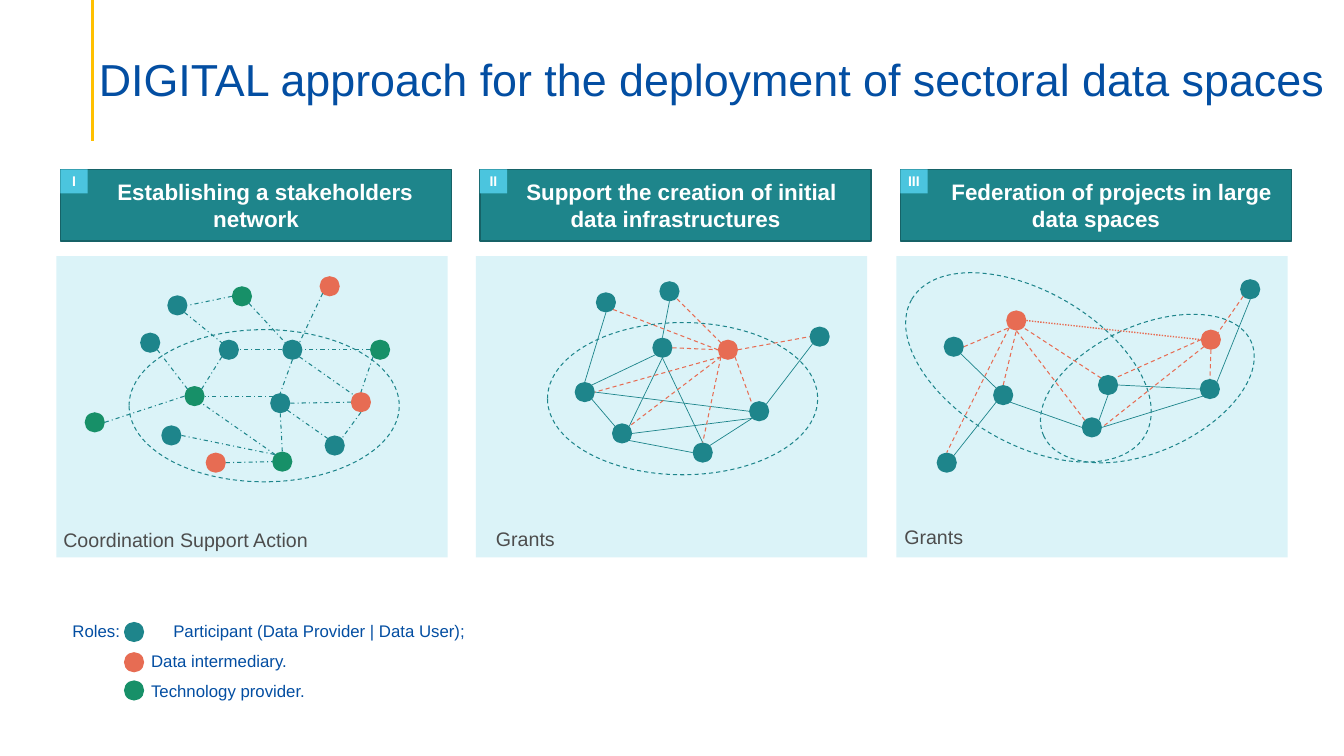
from dataclasses import dataclass

from pptx import Presentation
from pptx.dml.color import RGBColor
from pptx.enum.dml import MSO_LINE
from pptx.enum.shapes import MSO_CONNECTOR, MSO_SHAPE
from pptx.enum.text import MSO_ANCHOR, MSO_AUTO_SIZE, PP_ALIGN
from pptx.oxml.ns import qn
from pptx.util import Pt
from lxml import etree

RECT, OVAL = MSO_SHAPE.RECTANGLE, MSO_SHAPE.OVAL
STRAIGHT = MSO_CONNECTOR.STRAIGHT
DASH, DASH_DOT, DOT = MSO_LINE.DASH, MSO_LINE.DASH_DOT, MSO_LINE.ROUND_DOT
LEFT, CENTER = PP_ALIGN.LEFT, PP_ALIGN.CENTER
TOP, MIDDLE, BOTTOM = MSO_ANCHOR.TOP, MSO_ANCHOR.MIDDLE, MSO_ANCHOR.BOTTOM

PX = 9144


@dataclass(frozen=True)
class Theme:
    font: str = "Arial"
    blue: str = "034EA2"
    gold: str = "FFC000"
    teal: str = "1E858B"
    teal_edge: str = "166267"
    cyan: str = "4BC5DE"
    pale: str = "DBF3F8"
    coral: str = "E76C53"
    green: str = "179068"
    gray: str = "4D4D4D"
    white: str = "FFFFFF"
    title: int = 32
    header: int = 16
    caption: int = 14
    legend: int = 12
    badge: int = 10


THEME = Theme()

TITLE = "DIGITAL approach for the deployment of sectoral data spaces"
ROLE_COLORS = {"participant": THEME.teal, "intermediary": THEME.coral, "provider": THEME.green}
LINK_STYLES = {
    "contact": (THEME.teal, 0.75, DASH_DOT),
    "exchange": (THEME.teal, 0.5, None),
    "brokered": (THEME.coral, 0.75, DASH),
    "federated": (THEME.coral, 1, DOT),
}
PANELS = [
    {
        "number": "I", "header": "Establishing a stakeholders network", "indent": 18,
        "caption": ("Coordination Support Action", 53, 519, 264),
        "rings": [(128, 327, 268, 151, 0)],
        "nodes": {
            "participant": {"A": (149, 340), "B": (290, 347), "C": (227, 347), "D": (278, 400),
                            "F": (170, 432), "J": (176, 303), "M": (332, 442)},
            "intermediary": {"I": (327, 284), "N": (358, 399), "O": (214, 459)},
            "provider": {"E": (94, 419), "G": (193, 393), "H": (280, 458),
                         "K": (377, 347), "L": (240, 294)},
        },
        "links": {
            "contact": "L.se-B.nw I.sw-B.ne K.w-B.e K.sw-N.n B.se-N.nw D.e-N.w D.se-M.nw "
                       "D.s-H.n N.s-M.ne B.s-D.n B.w-C.e C.sw-G.ne O.e-H.w F.e-H.nw "
                       "D.nw-G.e E.e-G.w A.se-G.nw H.nw-G.se J.se-C.nw L.w-J.e",
        },
    },
    {
        "number": "II", "header": "Support the creation of initial data infrastructures", "indent": 12,
        "caption": ("Grants", 482, 518, 79),
        "rings": [(543, 320, 268, 151, 0)],
        "nodes": {
            "participant": {"A": (580, 389), "B": (617, 430), "C": (657, 345), "D": (697, 449),
                            "F": (601, 300), "G": (813, 334), "H": (664, 289), "I": (753, 408)},
            "intermediary": {"E": (722, 347)},
        },
        "links": {
            "exchange": "A.ne-C.sw A.se-B.nw B.se-D.w D.ne-I.sw I.w-A.e I.sw-B.e "
                        "C.s-B.ne C.s-D.n F.s-A.n G.sw-I.ne C.n-H.s",
            "brokered": "E.e-G.w E.nw-H.se F.se-E.w C.e-E.w E.se-I.nw E.sw-D.n E.sw-B.ne E.sw-A.e",
        },
    },
    {
        "number": "III", "header": "Federation of projects in large data spaces", "indent": 31,
        "caption": ("Grants", 887, 516, 79),
        "rings": [(886, 289, 268, 151, 30.3), (1025, 323, 226, 125, 335.5)],
        "nodes": {
            "participant": {"C": (946, 344), "D": (995, 392), "E": (1200, 386), "F": (1083, 424),
                            "G": (1099, 382), "H": (1240, 287), "I": (939, 459)},
            "intermediary": {"A": (1008, 318), "B": (1201, 337)},
        },
        "links": {
            "exchange": "C.se-D.nw D.sw-I.ne F.w-D.se G.s-F.ne E.sw-F.e E.w-G.e H.s-E.ne",
            "brokered": "A.sw-I.n C.e-A.sw D.n-A.s G.nw-A.se F.nw-A.s B.sw-F.e B.s-E.n "
                        "B.w-G.ne H.sw-B.ne",
            "federated": "A.e-B.w",
        },
    },
]
LEGEND = [
    ("Roles:\tParticipant (Data Provider | Data User);", "participant", 62, 611, 632, 0, 627),
    ("Data intermediary.", "intermediary", 117, 641, 188, 23, 657),
    ("Technology provider.", "provider", 117, 670, 201, 23, 685),
]
LEGEND_DOT_X, LEGEND_TAB = 133, 100
PANEL_SPAN = 833
RADIUS, DIAGONAL = 10, 7
SITES = {
    "n": (0, -RADIUS), "s": (0, RADIUS), "w": (-RADIUS, 0), "e": (RADIUS, 0),
    "nw": (-DIAGONAL, -DIAGONAL), "ne": (DIAGONAL, -DIAGONAL),
    "sw": (-DIAGONAL, DIAGONAL), "se": (DIAGONAL, DIAGONAL),
}


def scaled(*lengths):
    return [length * PX for length in lengths]


def apply(target, values):
    for name, value in values.items():
        setattr(target, name, value)


def write(shape, text, size, color, bold=False, align=LEFT, anchor=TOP, wrap=True,
          insets=(10, 5, 10, 5), indent=0, tab=0, **para_format):
    frame = shape.text_frame
    margins = dict(zip(("margin_left", "margin_top", "margin_right", "margin_bottom"), scaled(*insets)))
    apply(frame, {"auto_size": MSO_AUTO_SIZE.NONE, "word_wrap": wrap, "vertical_anchor": anchor, **margins})
    para = frame.paragraphs[0]
    apply(para, {"alignment": align, **para_format})
    settings = para._p.get_or_add_pPr()
    if indent:
        settings.set("indent", str(indent * PX))
    if tab:
        tabs = etree.SubElement(settings, qn("a:tabLst"))
        etree.SubElement(tabs, qn("a:tab"), pos=str(tab * PX), algn="l")
    span = para.add_run()
    span.text = text
    apply(span.font, {"name": THEME.font, "size": Pt(size), "bold": bold})
    span.font.color.rgb = RGBColor.from_string(color)


def set_line(line, color, width, dash=None):
    line.color.rgb = RGBColor.from_string(color)
    apply(line, {"width": Pt(width), "dash_style": dash})


def add_shape(page, kind, bounds, fill=None, edge=None, rotation=0):
    shape = page.shapes.add_shape(kind, *scaled(*bounds))
    shape.shadow.inherit = False
    shape.rotation = rotation
    if fill:
        shape.fill.solid()
        shape.fill.fore_color.rgb = RGBColor.from_string(fill)
    else:
        shape.fill.background()
    if edge:
        set_line(shape.line, *edge)
    else:
        shape.line.fill.background()
    return shape


def add_line(page, start, end, style):
    line = page.shapes.add_connector(STRAIGHT, *scaled(*start, *end))
    etree.SubElement(line._element.spPr, qn("a:effectLst"))
    set_line(line.line, *style)


def add_node(page, center, role):
    x, y = center
    add_shape(page, OVAL, (x - RADIUS, y - RADIUS, 2 * RADIUS, 2 * RADIUS), ROLE_COLORS[role])


def link_end(centers, label):
    name, site = label.split(".")
    return [place + offset for place, offset in zip(centers[name], SITES[site])]


def add_panel(page, index, panel):
    shift = index * PANEL_SPAN // 2
    header = add_shape(page, RECT, (60 + shift, 168, 388, 71), THEME.teal, (THEME.teal_edge, 1))
    write(header, panel["header"], THEME.header, THEME.white, bold=True, align=CENTER,
          anchor=MIDDLE, indent=panel["indent"])
    badge = add_shape(page, RECT, (60 + shift, 168, 27, 24), THEME.cyan)
    write(badge, panel["number"], THEME.badge, THEME.white, bold=True, align=CENTER,
          anchor=MIDDLE, wrap=False, insets=(0, 0, 0, 0))
    add_shape(page, RECT, (56 + shift, 254, 388, 299), THEME.pale)
    for *bounds, rotation in panel["rings"]:
        add_shape(page, OVAL, bounds, edge=(THEME.teal, 0.75, DASH), rotation=rotation)
    centers = {}
    for role, places in panel["nodes"].items():
        centers.update(places)
        for center in places.values():
            add_node(page, center, role)
    for style, links in panel["links"].items():
        for link in links.split():
            start, end = (link_end(centers, label) for label in link.split("-"))
            add_line(page, start, end, LINK_STYLES[style])
    text, left, top, width = panel["caption"]
    caption = page.shapes.add_textbox(*scaled(left, top, width, 34))
    write(caption, text, THEME.caption, THEME.gray, wrap=False)


def main():
    deck = Presentation()
    apply(deck, dict(zip(("slide_width", "slide_height"), scaled(1333, 750))))
    page = deck.slides.add_slide(deck.slide_layouts[5])
    add_line(page, (92, 0), (92, 140), (THEME.gold, 2.25))
    title = page.shapes.title
    apply(title, dict(zip(("left", "top", "width", "height"), scaled(88, 40, 1246, 65))))
    write(title, TITLE, THEME.title, THEME.blue, anchor=BOTTOM, insets=(10, 5, 10, 0), line_spacing=0.9)
    for index, panel in enumerate(PANELS):
        add_panel(page, index, panel)
    for text, role, left, top, width, indent, dot_y in LEGEND:
        box = page.shapes.add_textbox(*scaled(left, top, width, 30))
        write(box, text, THEME.legend, THEME.blue, indent=indent, tab=LEGEND_TAB, space_after=Pt(6))
        add_node(page, (LEGEND_DOT_X, dot_y), role)
    deck.save("out.pptx")


if __name__ == "__main__":
    main()
